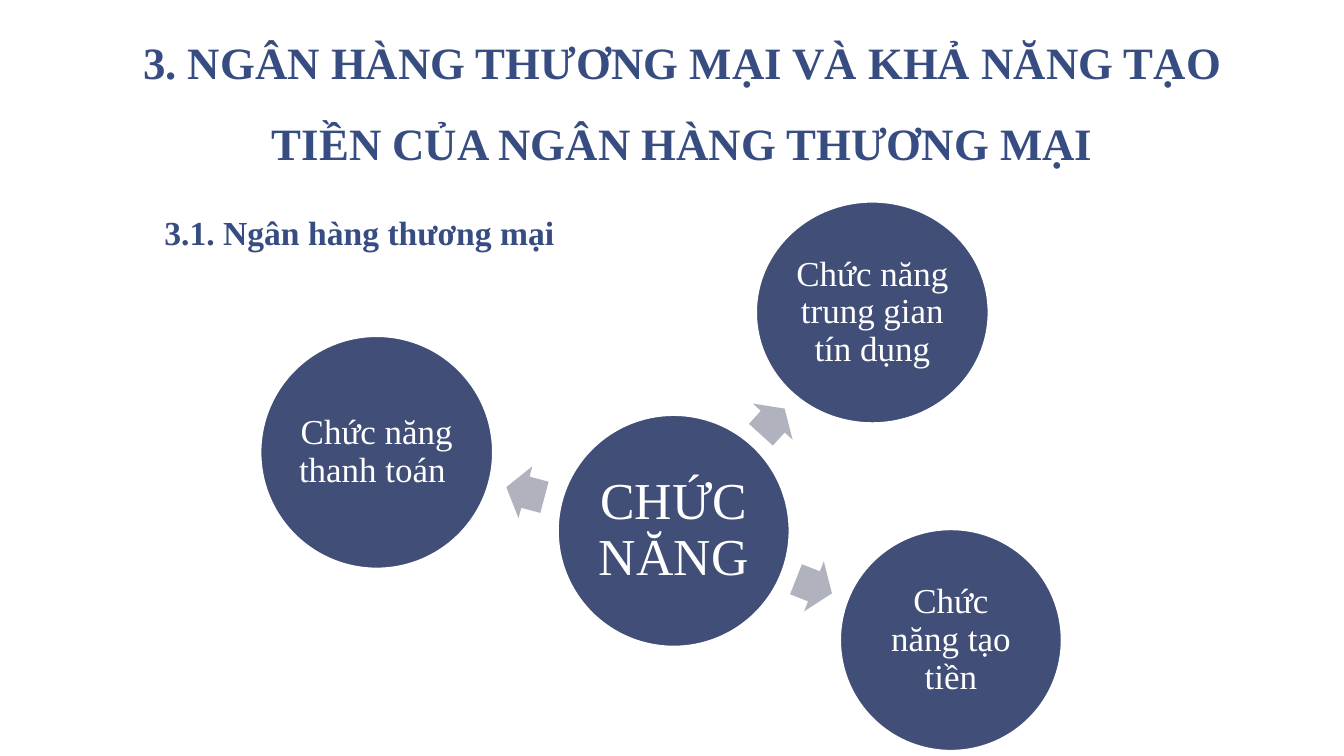
from lxml.etree import SubElement
from pptx import Presentation
from pptx.dml.color import RGBColor
from pptx.enum.shapes import MSO_SHAPE as Preset
from pptx.enum.text import MSO_ANCHOR as Anchor, MSO_AUTO_SIZE as AutoSize, PP_ALIGN as Align
from pptx.oxml.ns import qn
from pptx.util import Inches, Pt

NAVY, CIRCLE, ARROW, WHITE = "374C81", "414E77", "B0B2BD", "FFFFFF"
COLUMNS, ROWS = 160, 90

deck = Presentation()
deck.slide_width, deck.slide_height = Inches(13.33), Inches(7.5)
column, row = deck.slide_width / COLUMNS, deck.slide_height / ROWS
slide = deck.slides.add_slide(deck.slide_layouts[1])


def cells(left, top, width, height):
    return [round(n * unit) for n, unit in
            zip((left, top, width, height), (column, row, column, row))]


def write(shape, text, size, color, align, anchor, spacing, inset, bold=False):
    frame = shape.text_frame
    frame.word_wrap, frame.auto_size = True, AutoSize.NONE
    frame.vertical_anchor = anchor
    frame.margin_left = frame.margin_right = Inches(inset[0])
    frame.margin_top = frame.margin_bottom = Inches(inset[1])
    paragraph = frame.paragraphs[0]
    properties = paragraph._p.get_or_add_pPr()
    properties.set("marL", "0")
    properties.set("indent", "0")
    SubElement(properties, qn("a:buNone"))
    paragraph.alignment, paragraph.line_spacing = align, spacing
    paragraph.space_before = Pt(0)
    run = paragraph.add_run()
    run.text = text
    run.font.name, run.font.size, run.font.bold = "Times New Roman", Pt(size), bold
    run.font.color.rgb = RGBColor.from_string(color)


title, section = slide.placeholders
title.left, title.top, title.width, title.height = cells(14.6, 1, 133.3, 20)
write(title, "3. NGÂN HÀNG THƯƠNG MẠI VÀ KHẢ NĂNG TẠO TIỀN CỦA NGÂN HÀNG THƯƠNG MẠI",
      32, NAVY, Align.CENTER, Anchor.BOTTOM, 1.5, (0.13, 0.07), True)
section.left, section.top, section.width, section.height = cells(18, 22, 133.3, 59)
write(section, "3.1. Ngân hàng thương mại",
      24, NAVY, Align.LEFT, Anchor.TOP, 1.5, (0.13, 0.07), True)

functions = [
    ("CHỨC NĂNG", 37, 0.05, (66.4, 49.4, 27.6, 27.6)),
    ("Chức năng trung gian tín dụng", 25, 0.03, (90, 24, 27.7, 26.4)),
    ("Chức năng tạo tiền", 25, 0.03, (100, 63, 26.4, 26.4)),
    ("Chức năng thanh toán ", 25, 0.03, (31, 40, 27.7, 27.7)),
]
for label, size, inset, area in functions:
    circle = slide.shapes.add_shape(Preset.OVAL, *cells(*area))
    circle.shadow.inherit = False
    circle.fill.solid()
    circle.fill.fore_color.rgb = RGBColor.from_string(CIRCLE)
    circle.line.color.rgb = RGBColor.from_string(WHITE)
    circle.line.width = Pt(1.5)
    write(circle, label, size, WHITE, Align.CENTER, Anchor.MIDDLE, 0.9, (inset, inset))

directions = [
    (312.3, (89.9, 47, 4.2, 6.4)),
    (21.5, (94.6, 66.6, 4.6, 6.4)),
    (194.9, (60.2, 55.4, 4.7, 6.4)),
]
for angle, area in directions:
    arrow = slide.shapes.add_shape(Preset.RIGHT_ARROW, *cells(*area))
    arrow.shadow.inherit = False
    arrow.adjustments[0], arrow.adjustments[1] = 0.6, 0.5
    arrow.rotation = angle
    arrow.fill.solid()
    arrow.fill.fore_color.rgb = RGBColor.from_string(ARROW)
    arrow.line.fill.background()

deck.save("out.pptx")
